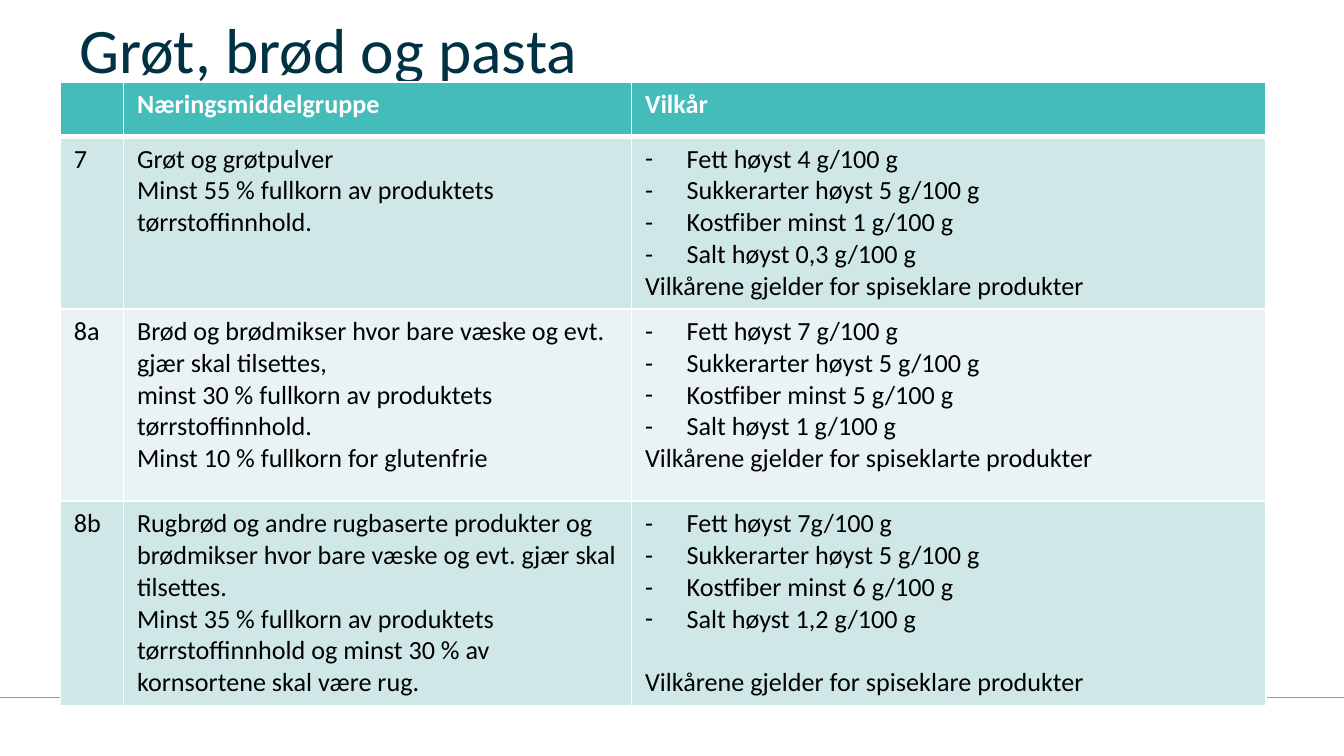
from lxml import etree
from pptx import Presentation
from pptx.dml.color import RGBColor
from pptx.enum.shapes import MSO_CONNECTOR
from pptx.enum.text import MSO_ANCHOR, MSO_AUTO_SIZE, PP_ALIGN
from pptx.oxml.ns import qn
from pptx.util import Inches, Pt

STRAIGHT = MSO_CONNECTOR.STRAIGHT
BOTTOM = MSO_ANCHOR.BOTTOM
NO_AUTOFIT = MSO_AUTO_SIZE.NONE
LEFT = PP_ALIGN.LEFT

TEAL = RGBColor(0x43, 0xBC, 0xBA)
NAVY = RGBColor(0x00, 0x32, 0x44)
PALE = RGBColor(0xCF, 0xE7, 0xE7)
PALEST = RGBColor(0xE9, 0xF3, 0xF3)
WHITE = RGBColor(0xFF, 0xFF, 0xFF)
BLACK = RGBColor(0x00, 0x00, 0x00)

COLUMN_WIDTHS = [0.47, 3.78, 4.72]
ROW_HEIGHTS = [0.4, 1.28, 1.43, 1.52]
DASH = "- "
FOOD_GROUPS = [
    (["7"],
     ["Grøt og grøtpulver",
      "Minst 55 % fullkorn av produktets tørrstoffinnhold."],
     ["- Fett høyst 4 g/100 g", "- Sukkerarter høyst 5 g/100 g",
      "- Kostfiber minst 1 g/100 g", "- Salt høyst 0,3 g/100 g",
      "Vilkårene gjelder for spiseklare produkter"]),
    (["8a"],
     ["Brød og brødmikser hvor bare væske og evt. gjær skal tilsettes,",
      "minst 30 % fullkorn av produktets tørrstoffinnhold.",
      "Minst 10 % fullkorn for glutenfrie"],
     ["- Fett høyst 7 g/100 g", "- Sukkerarter høyst 5 g/100 g",
      "- Kostfiber minst 5 g/100 g", "- Salt høyst 1 g/100 g",
      "Vilkårene gjelder for spiseklarte produkter"]),
    (["8b"],
     ["Rugbrød og andre rugbaserte produkter og brødmikser hvor bare væske "
      "og evt. gjær skal tilsettes.",
      "Minst 35 % fullkorn av produktets tørrstoffinnhold og minst 30 % av "
      "kornsortene skal være rug."],
     ["- Fett høyst 7g/100 g", "- Sukkerarter høyst 5 g/100 g",
      "- Kostfiber minst 6 g/100 g", "- Salt høyst 1,2 g/100 g",
      "Vilkårene gjelder for spiseklare produkter"]),
]


class SlideBuilder:
    """Holds the style and the current slide, and adds each kind of element."""

    font_name = "Calibri"
    title_size = Pt(34)
    text_size = Pt(14)
    indent = Inches(0.31)

    def __init__(self, slide):
        self.slide = slide

    def style(self, font, size, color, bold=False):
        font.name = self.font_name
        font.size = size
        font.bold = bold
        font.color.rgb = color

    def title(self, text, left, top, width, height):
        heading = self.slide.shapes.title
        heading.left, heading.top = Inches(left), Inches(top)
        heading.width, heading.height = Inches(width), Inches(height)
        frame = heading.text_frame
        frame.text = text
        frame.auto_size = NO_AUTOFIT
        frame.vertical_anchor = BOTTOM
        frame.paragraphs[0].alignment = LEFT
        self.style(frame.paragraphs[0].runs[0].font, self.title_size, NAVY)

    def rule(self, y, width):
        footer_rule = self.slide.shapes.add_connector(
            STRAIGHT, 0, Inches(y), Inches(width), Inches(y))
        footer_rule.line.color.rgb = TEAL
        footer_rule.line.width = Pt(1)
        etree.SubElement(footer_rule._element.spPr, qn("a:effectLst"))

    def table(self, left, top, widths, heights):
        grid = self.slide.shapes.add_table(
            len(heights), len(widths), Inches(left), Inches(top),
            Inches(sum(widths)), Inches(sum(heights))).table
        for column, width in zip(grid.columns, widths):
            column.width = Inches(width)
        for row, height in zip(grid.rows, heights):
            row.height = Inches(height)
        return grid

    def borders(self, cell, bottom, top):
        properties = cell._tc.get_or_add_tcPr()
        for side, points in (("L", 1), ("R", 1), ("T", top), ("B", bottom)):
            edge = etree.SubElement(properties, qn(f"a:ln{side}"), w=str(Pt(points)))
            fill = etree.SubElement(edge, qn("a:solidFill"))
            etree.SubElement(fill, qn("a:srgbClr"), val=str(WHITE))

    def dash(self, paragraph):
        properties = paragraph._p.get_or_add_pPr()
        properties.set("marL", str(self.indent))
        properties.set("indent", str(-self.indent))
        etree.SubElement(properties, qn("a:buFont"), typeface=self.font_name)
        etree.SubElement(properties, qn("a:buChar"), char="-")

    def cell(self, cell, lines, fill, color, bold=False, bottom=1, top=1):
        self.borders(cell, bottom, top)
        cell.fill.solid()
        cell.fill.fore_color.rgb = fill
        cell.text_frame.text = "\n".join(line.removeprefix(DASH) for line in lines)
        for paragraph, line in zip(cell.text_frame.paragraphs, lines):
            if line.startswith(DASH):
                self.dash(paragraph)
            for run in paragraph.runs:
                self.style(run.font, self.text_size, color, bold)


def main():
    presentation = Presentation()
    presentation.slide_width = Inches(10)
    presentation.slide_height = presentation.slide_width * 9 // 16
    builder = SlideBuilder(
        presentation.slides.add_slide(presentation.slide_layouts[5]))

    builder.rule(5.19, 10)
    builder.title("Grøt, brød og pasta", 0.49, 0.01, 8.98, 0.68)

    requirements = builder.table(0.45, 0.61, COLUMN_WIDTHS, ROW_HEIGHTS)
    for column, heading in enumerate(["", "Næringsmiddelgruppe", "Vilkår"]):
        builder.cell(requirements.cell(0, column), [heading], TEAL, WHITE,
                     bold=True, bottom=3)
    for row, group in enumerate(FOOD_GROUPS, start=1):
        for column, lines in enumerate(group):
            builder.cell(requirements.cell(row, column), lines,
                         PALE if row % 2 else PALEST, BLACK,
                         top=3 if row == 1 else 1)
    rye_note = requirements.cell(3, 2).text_frame.paragraphs[-1]
    rye_note.space_before = Pt(17)

    presentation.save("out.pptx")


if __name__ == "__main__":
    main()
